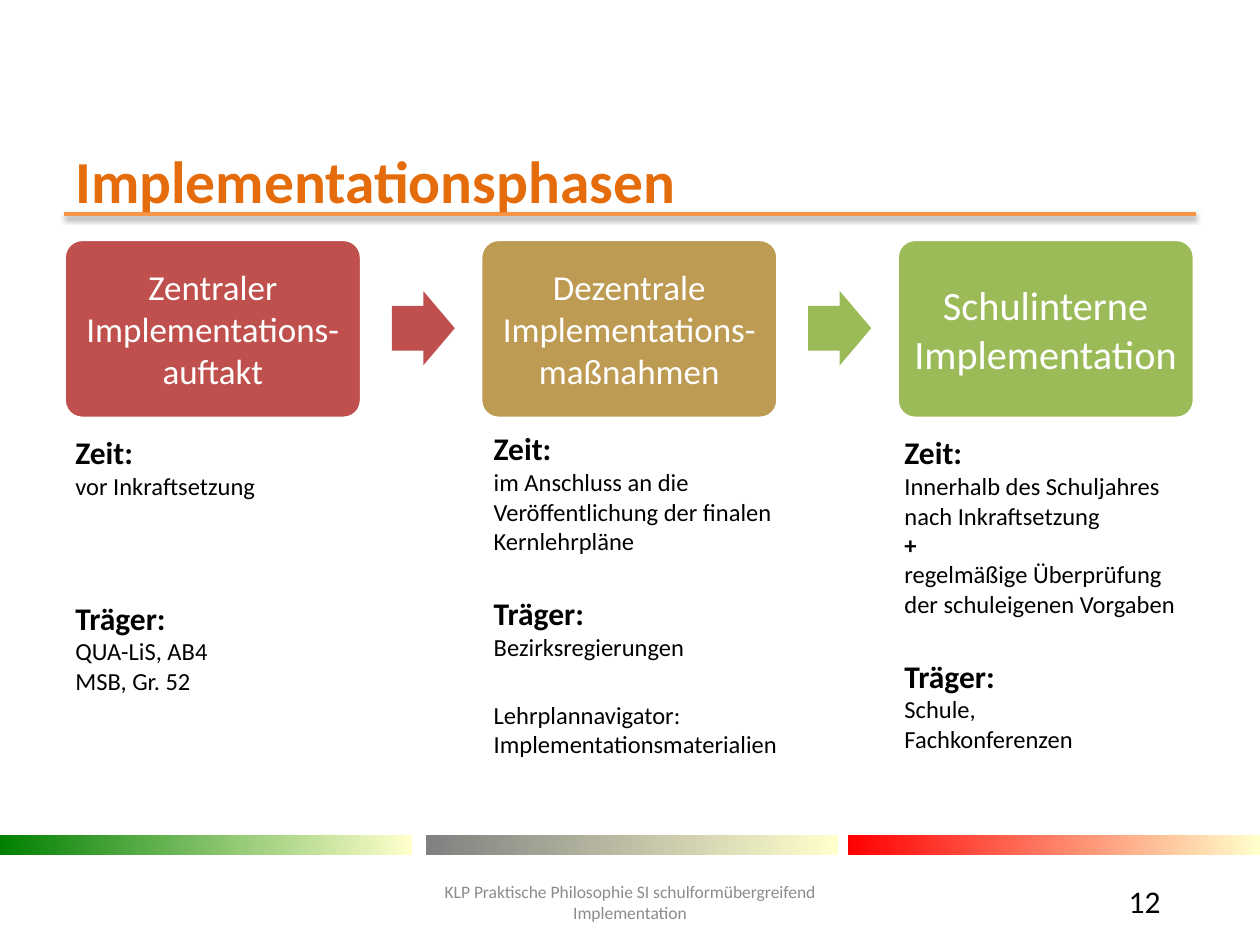
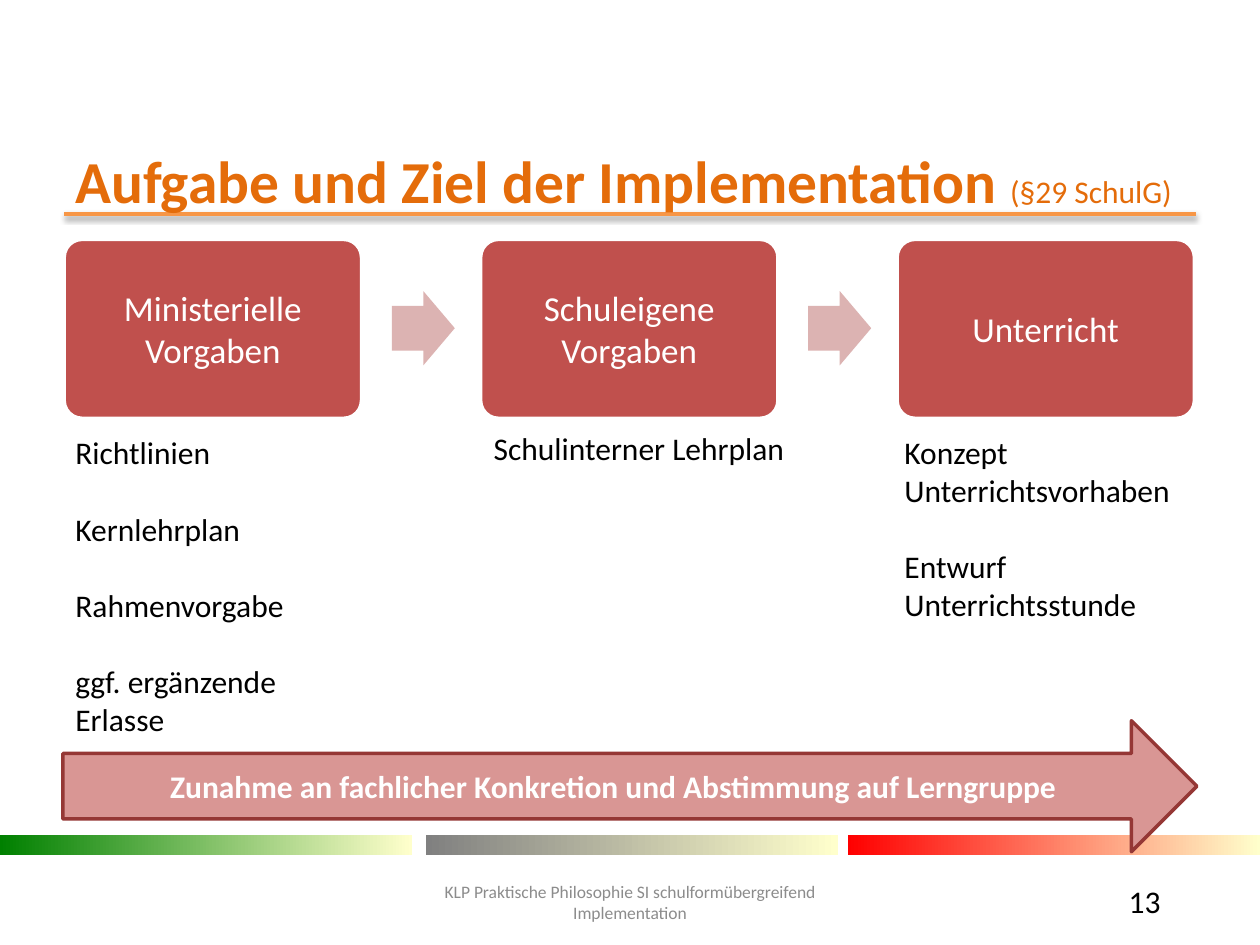
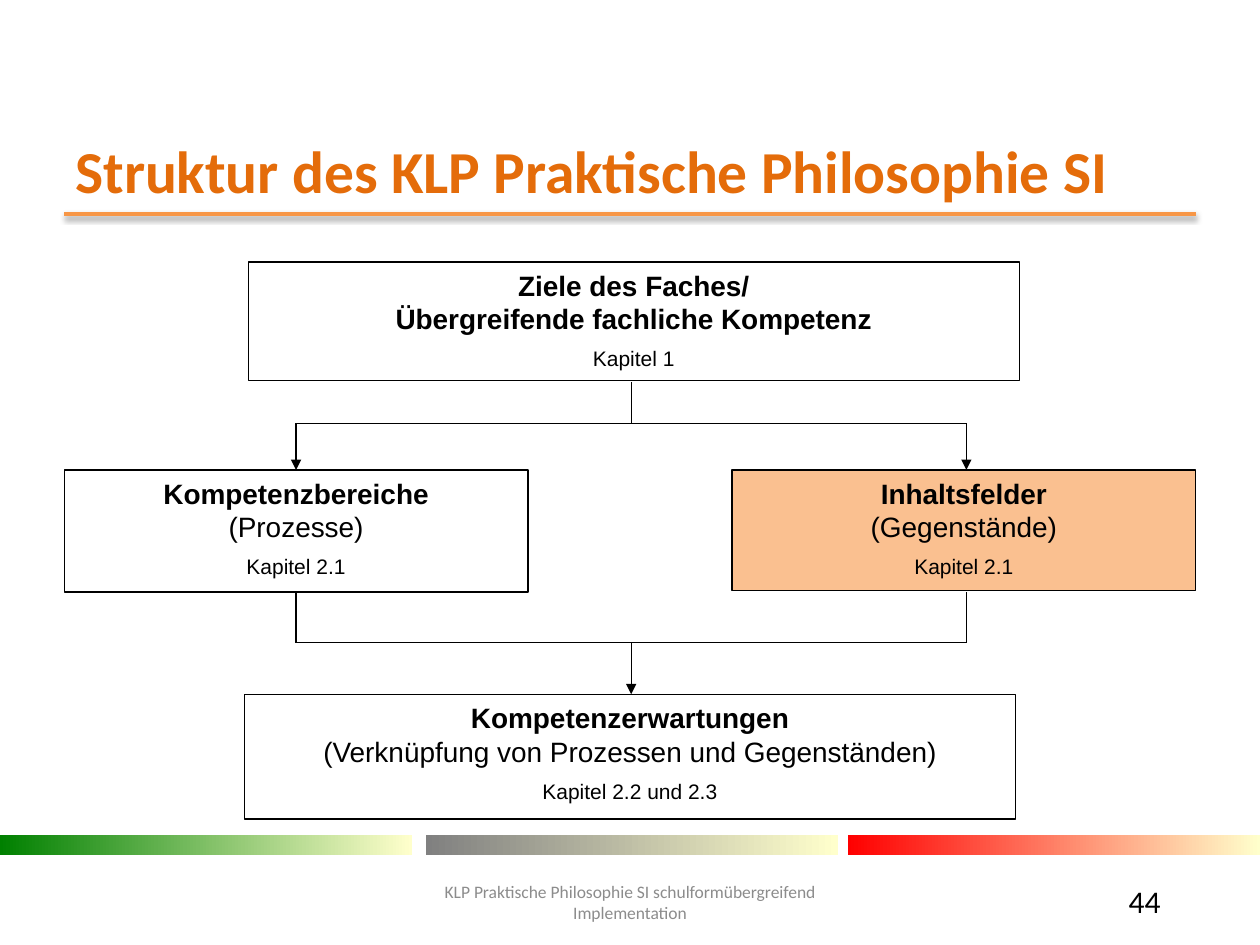
from lxml import etree
from pptx import Presentation
from pptx.dml.color import RGBColor
from pptx.enum.shapes import MSO_CONNECTOR, MSO_SHAPE
from pptx.enum.text import MSO_ANCHOR, PP_ALIGN
from pptx.oxml.ns import qn
from pptx.util import Inches, Pt

RECT, ROUND, ARROW = MSO_SHAPE.RECTANGLE, MSO_SHAPE.ROUNDED_RECTANGLE, MSO_SHAPE.RIGHT_ARROW
STRAIGHT = MSO_CONNECTOR.STRAIGHT
TOP, MIDDLE = MSO_ANCHOR.TOP, MSO_ANCHOR.MIDDLE
LEFT, CENTER = PP_ALIGN.LEFT, PP_ALIGN.CENTER

BLACK = RGBColor(0x00, 0x00, 0x00)
WHITE = RGBColor(0xFF, 0xFF, 0xFF)
GRAY = RGBColor(0x8C, 0x8C, 0x8C)
ORANGE = RGBColor(0xE4, 0x6C, 0x0A)
AMBER = RGBColor(0xF7, 0x96, 0x46)
PEACH = RGBColor(0xFA, 0xC0, 0x90)
RED = RGBColor(0xC0, 0x50, 0x4D)
GOLD = RGBColor(0xBD, 0x9B, 0x53)
GREEN = RGBColor(0x9B, 0xBB, 0x59)
PINK = RGBColor(0xDC, 0xB3, 0xB2)
ROSE = RGBColor(0xD9, 0x96, 0x94)
WINE = RGBColor(0x95, 0x37, 0x35)
CREAM = RGBColor(0xFF, 0xFF, 0xCC)
BANDS = [
    (0, RGBColor(0x00, 0x80, 0x00)),
    (3.38, RGBColor(0x80, 0x80, 0x80)),
    (6.73, RGBColor(0xFF, 0x00, 0x00)),
]


def write(shape, lines, color=BLACK, align=LEFT, anchor=TOP, face="Calibri"):
    """Fill a shape with lines of (text, size, bold, points of space before)."""
    frame = shape.text_frame
    frame.word_wrap = True
    frame.vertical_anchor = anchor
    for i, (text, size, bold, gap) in enumerate(lines):
        para = frame.paragraphs[0] if i == 0 else frame.add_paragraph()
        para.text = text
        para.alignment = align
        para.space_before = Pt(gap)
        font = para.font
        font.name, font.size, font.bold = face, Pt(size), bold
        font.color.rgb = color
    return frame


def link(slide, x1, y1, x2, y2, color=BLACK, width=0.75, tip=False):
    """Draw a straight line and return its effect list."""
    line = slide.shapes.add_connector(STRAIGHT, Inches(x1), Inches(y1), Inches(x2), Inches(y2))
    line.line.color.rgb = color
    line.line.width = Pt(width)
    if tip:
        etree.SubElement(line.line._get_or_add_ln(), qn("a:tailEnd"), type="triangle")
    return etree.SubElement(line._element.spPr, qn("a:effectLst"))


deck = Presentation()
deck.slide_width, deck.slide_height = Inches(10), Inches(7.5)

# Shared frame: title, rule, bands, footer and page number
pages = [
    ("Implementationsphasen", "12", 1.23, 0.39),
    ("Aufgabe und Ziel der Implementation ", "13", 1.23, 0.39),
    ("Struktur des KLP Praktische Philosophie SI", "44", 1.08, 0.54),
]
slides, titles = [], []
for title, number, top, height in pages:
    slide = deck.slides.add_slide(deck.slide_layouts[6])
    slides.append(slide)
    glow = link(slide, 0.51, 1.7, 9.49, 1.7, AMBER, 2)
    shade = etree.SubElement(glow, qn("a:outerShdw"), blurRad="39370", dist="20320",
                             dir="5400000", rotWithShape="0")
    tone = etree.SubElement(shade, qn("a:srgbClr"), val="000000")
    etree.SubElement(tone, qn("a:alpha"), val="38000")
    for x, color in BANDS:
        band = slide.shapes.add_shape(RECT, Inches(x), Inches(6.63), Inches(3.27), Inches(0.16))
        band.shadow.inherit = False
        band.line.fill.background()
        band.fill.gradient()
        band.fill.gradient_angle = 0
        for stop, shade in zip(band.fill.gradient_stops, (color, CREAM)):
            stop.color.rgb = shade
    foot = slide.shapes.add_textbox(Inches(3.27), Inches(6.94), Inches(3.46), Inches(0.44))
    write(foot, [("KLP Praktische Philosophie SI schulformübergreifend", 10, False, 0),
                 ("Implementation", 10, False, 0)], GRAY, CENTER)
    head = slide.shapes.add_textbox(Inches(0.5), Inches(top), Inches(9), Inches(height))
    titles.append(write(head, [(title, 34, True, 0)], ORANGE, anchor=MIDDLE))
    page = slide.shapes.add_textbox(Inches(8.86), Inches(6.95), Inches(0.64), Inches(0.4))
    write(page, [(number, 18, False, 0)])

phases, goals, chart = slides
law = titles[1].paragraphs[0].add_run()
law.text = "(§29 SchulG)"
law.font.size, law.font.bold = Pt(18), False

# Three steps with arrows and notes: (label, size, fill, arrow fill, notes)
flows = [
    (phases, [
        ("Zentraler Implementations-auftakt", 20, RED, RED, [
            ("Zeit:", 18, True, 0),
            ("vor Inkraftsetzung", 14, False, 0),
            ("Träger:", 18, True, 56),
            ("QUA-LiS, AB4", 14, False, 0),
            ("MSB, Gr. 52", 14, False, 0)]),
        ("Dezentrale Implementations-maßnahmen", 20, GOLD, GREEN, [
            ("Zeit:", 18, True, 0),
            ("im Anschluss an die Veröffentlichung der finalen Kernlehrpläne", 14, False, 0),
            ("Träger:", 18, True, 22),
            ("Bezirksregierungen", 14, False, 0),
            ("Lehrplannavigator:", 14, False, 22),
            ("Implementationsmaterialien", 14, False, 0)]),
        ("Schulinterne Implementation", 23, GREEN, None, [
            ("Zeit:", 18, True, 0),
            ("Innerhalb des Schuljahres nach Inkraftsetzung", 14, False, 0),
            ("+", 14, True, 0),
            ("regelmäßige Überprüfung der schuleigenen Vorgaben", 14, False, 0),
            ("Träger:", 18, True, 22),
            ("Schule,", 14, False, 0),
            ("Fachkonferenzen", 14, False, 0)]),
    ]),
    (goals, [
        ("Ministerielle Vorgaben", 20, RED, PINK, [
            ("Richtlinien", 18, False, 0),
            ("Kernlehrplan", 18, False, 22),
            ("Rahmenvorgabe", 18, False, 22),
            ("ggf. ergänzende Erlasse", 18, False, 22)]),
        ("Schuleigene Vorgaben", 20, RED, PINK, [("Schulinterner Lehrplan", 18, False, 0)]),
        ("Unterricht", 20, RED, None, [
            ("Konzept Unterrichtsvorhaben", 18, False, 0),
            ("Entwurf Unterrichtsstunde", 18, False, 22)]),
    ]),
]
spots = [(0.5, 3.39, 2.37, 2.86), (3.82, 3.36, 2.6, 2.73), (7.08, 3.39, 2.46, 3.2)]
for slide, steps in flows:
    for i, (label, size, fill, next_fill, notes) in enumerate(steps):
        x = 0.51 + 3.305 * i
        card = slide.shapes.add_shape(ROUND, Inches(x), Inches(1.9), Inches(2.36), Inches(1.42))
        card.adjustments[0] = 0.1
        card.shadow.inherit = False
        card.fill.solid()
        card.fill.fore_color.rgb = fill
        card.line.color.rgb = WHITE
        card.line.width = Pt(2)
        frame = write(card, [(label, size, False, 0)], WHITE, CENTER, MIDDLE)
        frame.margin_left = frame.margin_right = Inches(0.08)
        if next_fill:
            arrow = slide.shapes.add_shape(ARROW, Inches(x + 2.6), Inches(2.31),
                                           Inches(0.5), Inches(0.59))
            arrow.adjustments[0] = 0.6
            arrow.shadow.inherit = False
            arrow.fill.solid()
            arrow.fill.fore_color.rgb = next_fill
            arrow.line.fill.background()
        note = slide.shapes.add_textbox(*map(Inches, spots[i]))
        write(note, notes)

trend = goals.shapes.add_shape(ARROW, Inches(0.5), Inches(5.72), Inches(9), Inches(1.04))
trend.shadow.inherit = False
trend.fill.solid()
trend.fill.fore_color.rgb = ROSE
trend.line.color.rgb = WINE
trend.line.width = Pt(2)
write(trend, [("Zunahme an fachlicher Konkretion und Abstimmung auf Lerngruppe", 18, True, 0)],
      WHITE, CENTER, MIDDLE)

# Structure chart: (place, fill, heading, second line, second line bold, chapter)
boxes = [
    ((1.97, 2.08, 6.12, 0.94), WHITE, "Ziele des Faches/",
     "Übergreifende fachliche Kompetenz", True, "Kapitel 1"),
    ((0.51, 3.73, 3.68, 0.97), WHITE, "Kompetenzbereiche", "(Prozesse)", False, "Kapitel 2.1"),
    ((5.81, 3.73, 3.68, 0.96), PEACH, "Inhaltsfelder", "(Gegenstände)", False, "Kapitel 2.1"),
    ((1.94, 5.51, 6.12, 0.99), WHITE, "Kompetenzerwartungen",
     "(Verknüpfung von Prozessen und Gegenständen)", False, "Kapitel 2.2 und 2.3"),
]
for place, fill, top, second, bold, part in boxes:
    box = chart.shapes.add_shape(RECT, *map(Inches, place))
    box.shadow.inherit = False
    box.fill.solid()
    box.fill.fore_color.rgb = fill
    box.line.color.rgb = BLACK
    box.line.width = Pt(0.75)
    write(box, [(top, 16, True, 0), (second, 16, bold, 0), (part, 12, False, 6)],
          align=CENTER, face="Arial")

mid = 5.01
link(chart, mid, 3.03, mid, 3.36)
for x in (2.35, 7.67):
    link(chart, mid, 3.36, x, 3.36)
    link(chart, x, 3.36, x, 3.73, tip=True)
    link(chart, x, 4.7, x, 5.1)
    link(chart, x, 5.1, mid, 5.1)
link(chart, mid, 5.1, mid, 5.51, tip=True)

deck.save("out.pptx")
